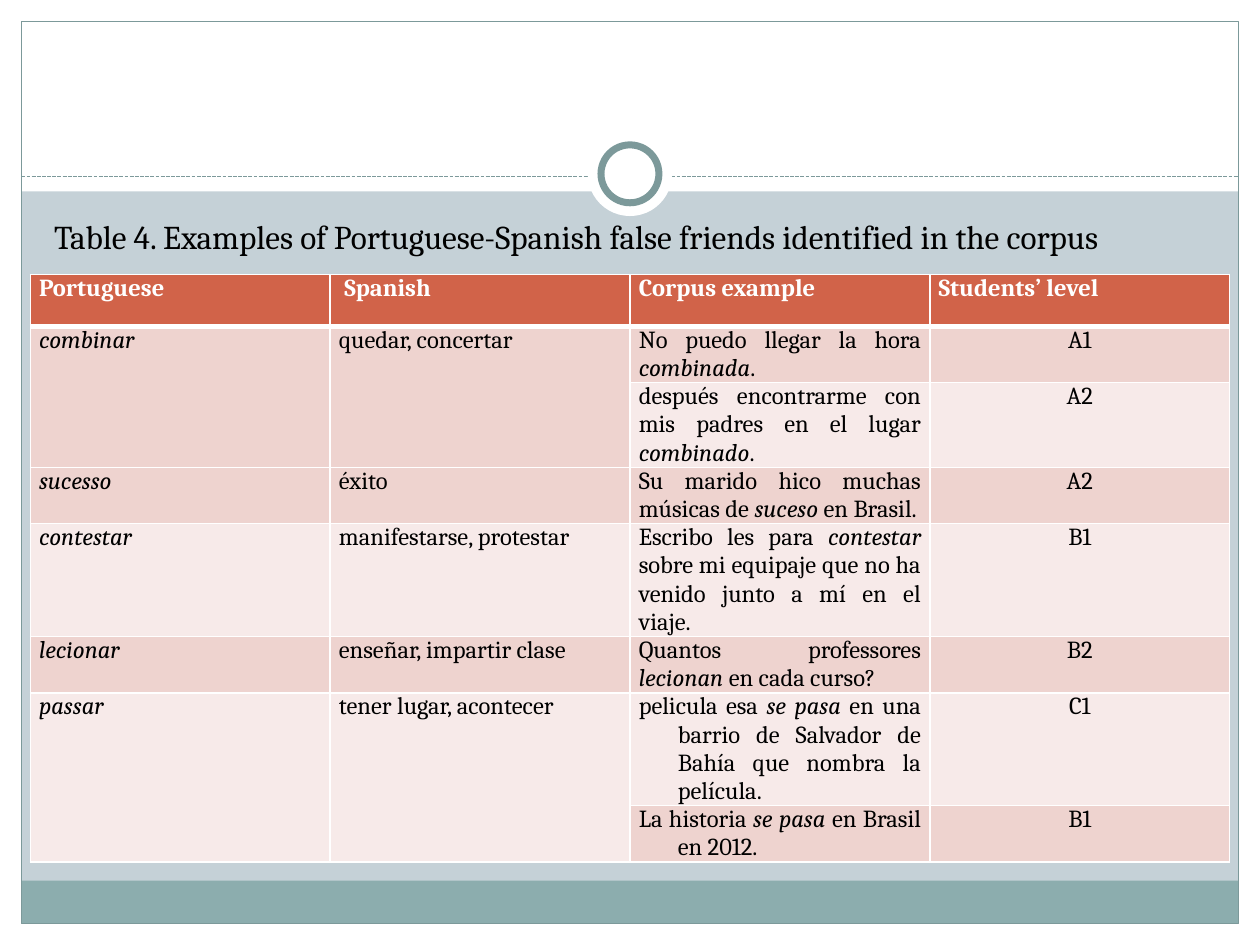
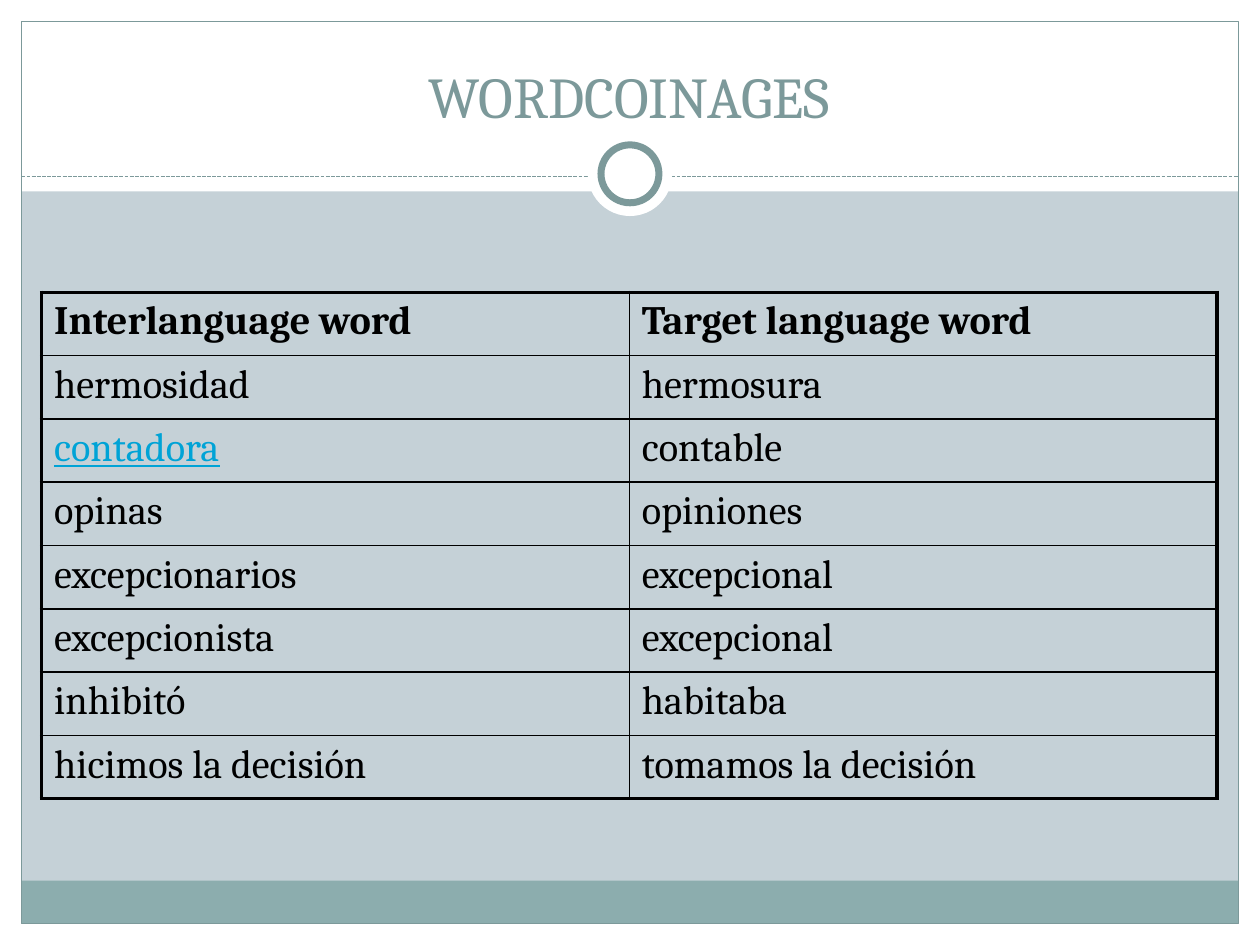
from dataclasses import dataclass

from lxml.etree import SubElement
from pptx import Presentation
from pptx.dml.color import RGBColor
from pptx.enum.dml import MSO_LINE_DASH_STYLE as Dash
from pptx.enum.shapes import MSO_CONNECTOR as Connector, MSO_SHAPE as Shape
from pptx.enum.text import MSO_ANCHOR as Anchor, MSO_AUTO_SIZE as AutoSize, PP_ALIGN as Align
from pptx.oxml.ns import qn
from pptx.util import Emu, Inches, Pt

WIDTH, HEIGHT = Inches(10), Inches(7.5)
COLUMN, ROW = WIDTH / 10, HEIGHT / 7.5
FONT = "Cambria"

WHITE = RGBColor(0xFF, 0xFF, 0xFF)
BLACK = RGBColor(0, 0, 0)
MIST = RGBColor(0xC5, 0xD1, 0xD7)
TEAL = RGBColor(0x8C, 0xAD, 0xAE)
SLATE = RGBColor(0x7C, 0x99, 0x9A)
BRICK = RGBColor(0xD1, 0x63, 0x49)
ROSE = RGBColor(0xEE, 0xD3, 0xCF)
BLUSH = RGBColor(0xF7, 0xEA, 0xE9)
LINK_BLUE = RGBColor(0x00, 0xA3, 0xD6)

FALSE_FRIENDS = [
    ("Portuguese", " Spanish", "Corpus example", "Students’ level"),
    ("*combinar*", "quedar, concertar", "No puedo llegar la hora *combinada*.", "A1"),
    ("", "", "después encontrarme con mis padres en el lugar *combinado*.", "A2"),
    ("*sucesso*", "éxito", "Su marido hico muchas músicas de *suceso *en Brasil.", "A2"),
    ("*contestar*", "manifestarse, protestar",
     "Escribo les para *contestar* sobre mi equipaje que no ha venido junto a mí en el viaje.", "B1"),
    ("*lecionar*", "enseñar, impartir clase", "Quantos professores *lecionan* en cada curso?", "B2"),
    ("*passar*", "tener lugar, acontecer",
     "pelicula esa *se pasa* en una barrio de Salvador de Bahía que nombra la película.", "C1"),
    ("", "", "La historia *se pasa* en Brasil en 2012.", "B1"),
]
TWO_ROW_WORDS = (1, 6)
HANGING_ROWS = (6, 7)

COINAGES = [
    ("Interlanguage word", "Target language word"),
    ("hermosidad", "hermosura"),
    ("contadora", "contable"),
    ("opinas", "opiniones"),
    ("excepcionarios", "excepcional"),
    ("excepcionista", "excepcional"),
    ("inhibitó", "habitaba"),
    ("hicimos la decisión", "tomamos la decisión"),
]
LINKED_WORD = "contadora"


@dataclass
class Box:
    left: float
    top: float
    width: float
    height: float

    def inside(self, left, top, width, height):
        return Box(self.left + left, self.top + top, width, height)

    def emu(self):
        return (Emu(round(self.left * COLUMN)), Emu(round(self.top * ROW)),
                Emu(round(self.width * COLUMN)), Emu(round(self.height * ROW)))


PAGE = Box(0, 0, 10, 7.5)


def add_panel(slide, kind, box, fill=None, line_width=None):
    panel = slide.shapes.add_shape(kind, *box.emu())
    panel.shadow.inherit = False
    if fill is None:
        panel.fill.background()
    else:
        panel.fill.solid()
        panel.fill.fore_color.rgb = fill
    if line_width is None:
        panel.line.fill.background()
    else:
        panel.line.color.rgb = SLATE
        panel.line.width = Pt(line_width)
    return panel


def add_divider(slide, box):
    left, top, width, _ = box.emu()
    divider = slide.shapes.add_connector(Connector.STRAIGHT, left, top, left + width, top)
    divider.line.color.rgb = SLATE
    divider.line.width = Pt(0.75)
    divider.line.dash_style = Dash.SQUARE_DOT
    SubElement(divider.element.spPr, qn("a:effectLst"))
    return divider


def decorate_master(master, slide, page):
    master.background.fill.solid()
    master.background.fill.fore_color.rgb = MIST
    margin = 0.17
    frame = page.inside(margin, margin, page.width - 2 * margin, page.height - 2 * margin)
    footer_height = 0.34
    bands = [
        page.inside(0, page.height - margin, page.width, margin),
        page.inside(0, 0, page.width, 1.52),
        page.inside(0, 0, margin, page.height),
        page.inside(page.width - margin, 0, margin, page.height),
    ]
    parts = [add_panel(slide, Shape.RECTANGLE, band, WHITE) for band in bands]
    footer = frame.inside(0, frame.height - footer_height, frame.width, footer_height)
    parts.append(add_panel(slide, Shape.RECTANGLE, footer, TEAL))
    parts.append(add_panel(slide, Shape.RECTANGLE, frame, line_width=0.75))
    parts.append(add_divider(slide, frame.inside(0, 1.23, frame.width, 0)))
    for size, line_width in ((0.67, None), (0.46, 4)):
        ring = page.inside((page.width - size) / 2, 1.38 - size / 2, size, size)
        parts.append(add_panel(slide, Shape.OVAL, ring, WHITE, line_width))
    for order, part in enumerate(parts):
        part.element.xpath("./*/p:cNvPr")[0].set("id", str(100 + order))
        master.shapes.element.insert(2 + order, part.element)


def place(placeholder, box):
    placeholder.left, placeholder.top, placeholder.width, placeholder.height = box.emu()


def style_run(run, size, color=BLACK, bold=False, italic=False):
    run.font.name = FONT
    run.font.size = Pt(size)
    run.font.color.rgb = color
    run.font.bold = bold
    run.font.italic = italic


def write_heading(placeholder, box, wording, size, color, align, anchor):
    place(placeholder, box)
    frame = placeholder.text_frame
    frame.text = wording
    frame.auto_size = AutoSize.NONE
    frame.vertical_anchor = anchor
    paragraph = frame.paragraphs[0]
    paragraph.alignment = align
    paragraph.space_before = Pt(0)
    properties = paragraph._p.get_or_add_pPr()
    properties.set("marL", "0")
    properties.set("indent", "0")
    SubElement(properties, qn("a:buNone"))
    style_run(paragraph.runs[0], size, color)


def write_marked(paragraph, wording, size, color, bold):
    for order, piece in enumerate(wording.split("*")):
        if piece:
            run = paragraph.add_run()
            run.text = piece
            style_run(run, size, color, bold, italic=order % 2 == 1)


def set_borders(cell, color, **widths):
    properties = cell._tc.get_or_add_tcPr()
    for side in "LRTB":
        edge = SubElement(properties, qn(f"a:ln{side}"), w=str(Pt(widths[side])))
        fill = SubElement(edge, qn("a:solidFill"))
        SubElement(fill, qn("a:srgbClr"), val=str(color))


def add_grid(slide, box, rows):
    grid = slide.shapes.add_table(len(rows), len(rows[0]), *box.emu()).table
    grid.horz_banding = False
    return grid


def fill_friend_cell(cell, wording, row, column):
    header = row == 0
    set_borders(cell, WHITE, L=1, R=1, T=3 if row == 1 else 1, B=3 if header else 1)
    cell.fill.solid()
    cell.fill.fore_color.rgb = BRICK if header else (BLUSH, ROSE)[row % 2]
    cell.margin_left = cell.margin_right = Inches(0.07)
    cell.margin_top = cell.margin_bottom = 0
    paragraph = cell.text_frame.paragraphs[0]
    paragraph.alignment = Align.CENTER if column == 3 and not header else Align.JUSTIFY
    if row in HANGING_ROWS:
        properties = paragraph._p.get_or_add_pPr()
        properties.set("marL", str(Inches(0.31)))
        properties.set("indent", str(-Inches(0.31)))
    write_marked(paragraph, wording, 14, WHITE if header else BLACK, header)


def fill_coinage_cell(cell, wording, row, column):
    thick, thin = 2.25, 1
    set_borders(cell, BLACK,
                L=thick if column == 0 else thin,
                R=thick if column == 1 else thin,
                T=thick if row == 0 else thin,
                B=thick if row == len(COINAGES) - 1 else thin)
    cell.fill.background()
    cell.text_frame.text = wording
    run = cell.text_frame.paragraphs[0].runs[0]
    linked = wording == LINKED_WORD
    style_run(run, 23, LINK_BLUE if linked else BLACK, bold=row == 0)
    run.font.underline = linked


def fill_grid(grid, rows, fill_cell):
    for row, words in enumerate(rows):
        for column, wording in enumerate(words):
            fill_cell(grid.cell(row, column), wording, row, column)


def build_false_friends(slide, page):
    title, caption = slide.placeholders
    title.element.getparent().remove(title.element)
    write_heading(caption, page.inside(0.33, 1.67, 9.3, 5),
                  "Table 4. Examples of Portuguese-Spanish false friends identified in the corpus",
                  19, BLACK, Align.LEFT, Anchor.TOP)
    row_height = 0.41
    grid = add_grid(slide, page.inside(0.24, 2.18, 9.52, row_height * len(FALSE_FRIENDS)), FALSE_FRIENDS)
    fill_grid(grid, FALSE_FRIENDS, fill_friend_cell)
    for row in TWO_ROW_WORDS:
        for column in (0, 1):
            grid.cell(row, column).merge(grid.cell(row + 1, column))


def build_coinages(slide, page):
    write_heading(slide.shapes.title, page.inside(0.33, 0.25, 9.33, 0.83),
                  "WORDCOINAGES", 33, SLATE, Align.CENTER, Anchor.BOTTOM)
    grid = add_grid(slide, page.inside(0.33, 2.32, 9.33, 4.02), COINAGES)
    fill_grid(grid, COINAGES, fill_coinage_cell)


def main():
    deck = Presentation()
    deck.slide_width, deck.slide_height = WIDTH, HEIGHT
    friends_slide = deck.slides.add_slide(deck.slide_layouts[1])
    decorate_master(deck.slide_master, friends_slide, PAGE)
    build_false_friends(friends_slide, PAGE)
    build_coinages(deck.slides.add_slide(deck.slide_layouts[5]), PAGE)
    deck.save("out.pptx")


if __name__ == "__main__":
    main()
